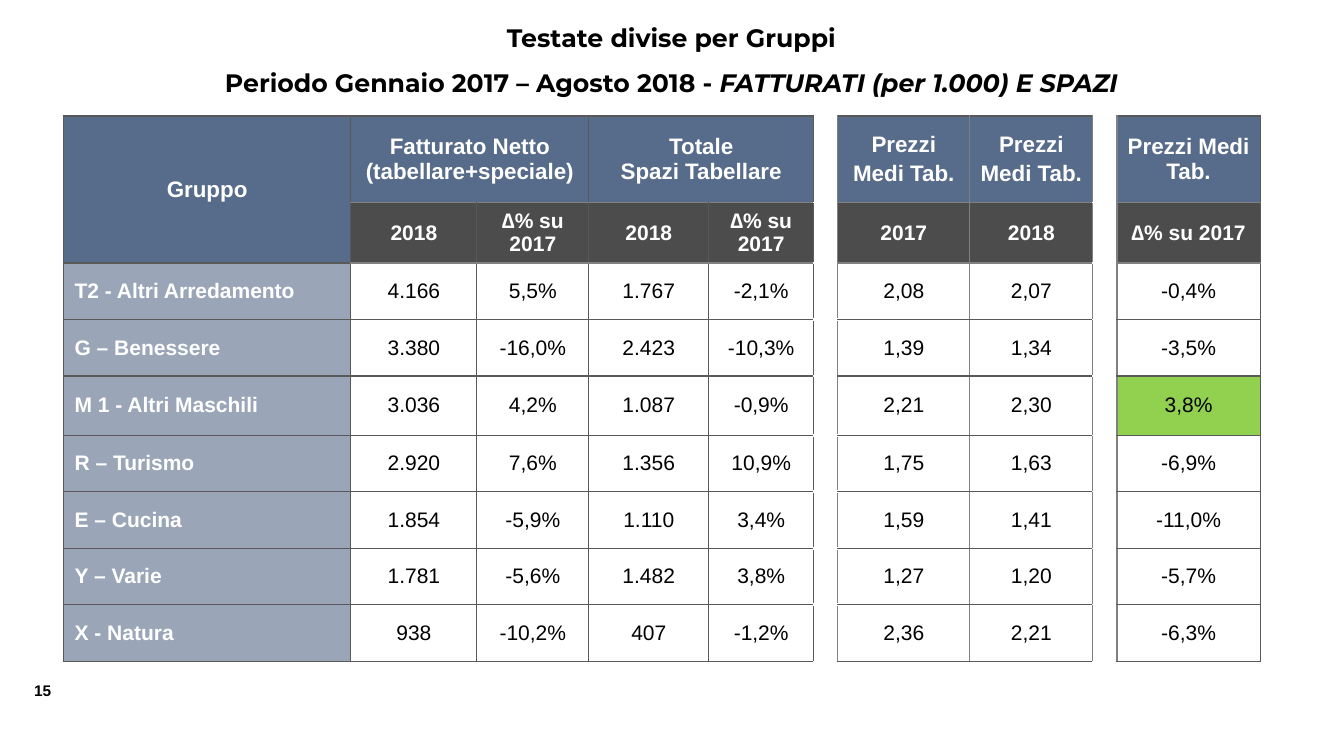
from dataclasses import dataclass
from lxml.etree import SubElement
from pptx import Presentation
from pptx.dml.color import RGBColor
from pptx.enum.text import MSO_ANCHOR, PP_ALIGN
from pptx.oxml.ns import qn
from pptx.util import Inches, Pt


@dataclass(frozen=True)
class Theme:
    font: str = "Arial"
    title_font: str = "Montserrat"
    blue: str = "576B8A"
    black: str = "000000"
    white: str = "FFFFFF"
    green: str = "92D050"
    dark_line: str = "595959"
    mid_line: str = "808080"
    title_size: int = 18
    head_size: int = 16
    cell_size: int = 15
    number_size: int = 11


theme = Theme()

TITLE_TOP = "Testate divise per Gruppi"
TITLE_PERIOD = "Periodo Gennaio 2017 – Agosto 2018 - "
TITLE_TOPIC = "FATTURATI (per 1.000) E SPAZI"
PAGE = "15"
ROWS = [
    ("Gruppo", "Fatturato Netto (tabellare+speciale)", "", "Totale\nSpazi Tabellare", "", "",
     "Prezzi\nMedi Tab.", "Prezzi\nMedi Tab.", "", "Prezzi Medi Tab."),
    ("", "2018", "∆% su 2017", "2018", "∆% su 2017", "", "2017", "2018", "", "∆% su 2017"),
    ("T2 - Altri Arredamento", "4.166", "5,5%", "1.767", "-2,1%", "", "2,08", "2,07", "", "-0,4%"),
    ("G – Benessere", "3.380", "-16,0%", "2.423", "-10,3%", "", "1,39", "1,34", "", "-3,5%"),
    ("M 1 - Altri Maschili", "3.036", "4,2%", "1.087", "-0,9%", "", "2,21", "2,30", "", "3,8%"),
    ("R – Turismo", "2.920", "7,6%", "1.356", "10,9%", "", "1,75", "1,63", "", "-6,9%"),
    ("E – Cucina", "1.854", "-5,9%", "1.110", "3,4%", "", "1,59", "1,41", "", "-11,0%"),
    ("Y – Varie", "1.781", "-5,6%", "1.482", "3,8%", "", "1,27", "1,20", "", "-5,7%"),
    ("X - Natura", "938", "-10,2%", "407", "-1,2%", "", "2,36", "2,21", "", "-6,3%"),
]
COL_WIDTHS = [2.85, 1.25, 1.11, 1.19, 1.04, 0.24, 1.31, 1.22, 0.24, 1.42]
ROW_HEIGHTS = [0.86, 0.6, 0.56, 0.56, 0.59, 0.56, 0.56, 0.56, 0.56]
MERGES = [((0, 0), (1, 0)), ((0, 1), (0, 2)), ((0, 3), (0, 4))]
GAPS = (5, 8)
PRICE_COLS = (6, 7)
GROWTH_CELL = (4, 9)


def set_font(p, size, color, bold, name=theme.font):
    p.font.name = name
    p.font.size = Pt(size)
    p.font.bold = bold
    p.font.color.rgb = RGBColor.from_string(color)


def vertical_edge(edge):
    return (theme.mid_line if 6 <= edge <= 9 else theme.dark_line), 1


def horizontal_edge(edge, col):
    if col in GAPS:
        return theme.white, 2.25 if col == GAPS[0] and 3 <= edge <= 8 else 1
    return (theme.mid_line if edge in (1, 2) and col else theme.dark_line), 1


def set_borders(cell, row, col):
    edges = {"a:lnL": vertical_edge(col), "a:lnR": vertical_edge(col + 1),
             "a:lnT": horizontal_edge(row, col), "a:lnB": horizontal_edge(row + 1, col)}
    for tag, (color, width) in edges.items():
        ln = SubElement(cell._tc.get_or_add_tcPr(), qn(tag), w=str(Pt(width)))
        SubElement(SubElement(ln, qn("a:solidFill")), qn("a:srgbClr"), val=color)


def cell_fill(row, col):
    if col in GAPS:
        return theme.white, 100
    if row == 0 or (row, col) == (1, 0):
        return theme.blue, 100
    if row == 1:
        return theme.black, 70
    if col == 0:
        return theme.blue, 60
    return (theme.green if (row, col) == GROWTH_CELL else theme.white), 100


def set_fill(cell, color, opacity):
    cell.fill.solid()
    cell.fill.fore_color.rgb = RGBColor.from_string(color)
    if opacity < 100:
        clr = cell._tc.tcPr.find(qn("a:solidFill"))[0]
        SubElement(clr, qn("a:alpha"), val=str(opacity * 1000))


def set_text(cell, row, col, text):
    header, label = row < 2, row >= 2 and col == 0
    cell.vertical_anchor = MSO_ANCHOR.MIDDLE
    cell.margin_left = Inches(0.11 if label else 0.1 if header else 0)
    cell.margin_right = Inches(0.1 if header else 0)
    cell.margin_top = cell.margin_bottom = Inches(0.05 if header else 0)
    cell.text = text
    for i, p in enumerate(cell.text_frame.paragraphs):
        p.alignment = PP_ALIGN.LEFT if label else PP_ALIGN.CENTER
        if i and col in PRICE_COLS:
            p.space_before = Pt(3)
        set_font(p, theme.cell_size if row else theme.head_size,
                 theme.white if header or label else theme.black, header or label)


def add_title(s):
    title = s.shapes.title
    title.left, title.top = Inches(1.11), Inches(0.02)
    title.width, title.height = Inches(11.1), Inches(1.07)
    tf = title.text_frame
    tf.vertical_anchor = MSO_ANCHOR.TOP
    p = tf.paragraphs[0]
    p.alignment = PP_ALIGN.CENTER
    p.line_spacing = 1.5
    set_font(p, theme.title_size, theme.black, True, theme.title_font)
    p.add_run().text = TITLE_TOP
    p.add_line_break()
    p.add_run().text = TITLE_PERIOD
    r = p.add_run()
    r.text = TITLE_TOPIC
    r.font.italic = True


def add_groups_table(s):
    frame = s.shapes.add_table(len(ROWS), len(COL_WIDTHS), Inches(0.63), Inches(1.15),
                               Inches(sum(COL_WIDTHS)), Inches(sum(ROW_HEIGHTS)))
    table = frame.table
    table.first_row = table.horz_banding = False
    for column, width in zip(table.columns, COL_WIDTHS):
        column.width = Inches(width)
    for line, height in zip(table.rows, ROW_HEIGHTS):
        line.height = Inches(height)
    for row, values in enumerate(ROWS):
        for col, text in enumerate(values):
            cell = table.cell(row, col)
            set_borders(cell, row, col)
            set_fill(cell, *cell_fill(row, col))
            set_text(cell, row, col, text)
    for first, last in MERGES:
        table.cell(*first).merge(table.cell(*last))


def add_page_number(s):
    box = s.shapes.add_textbox(Inches(0.24), Inches(6.71), Inches(0.42), Inches(0.29))
    tf = box.text_frame
    tf.word_wrap = False
    tf.text = PAGE
    set_font(tf.paragraphs[0], theme.number_size, theme.black, True)


def main():
    prs = Presentation()
    prs.slide_width, prs.slide_height = Inches(13.33), Inches(7.5)
    s = prs.slides.add_slide(prs.slide_layouts[5])
    add_title(s)
    add_groups_table(s)
    add_page_number(s)
    prs.save("out.pptx")


if __name__ == "__main__":
    main()
